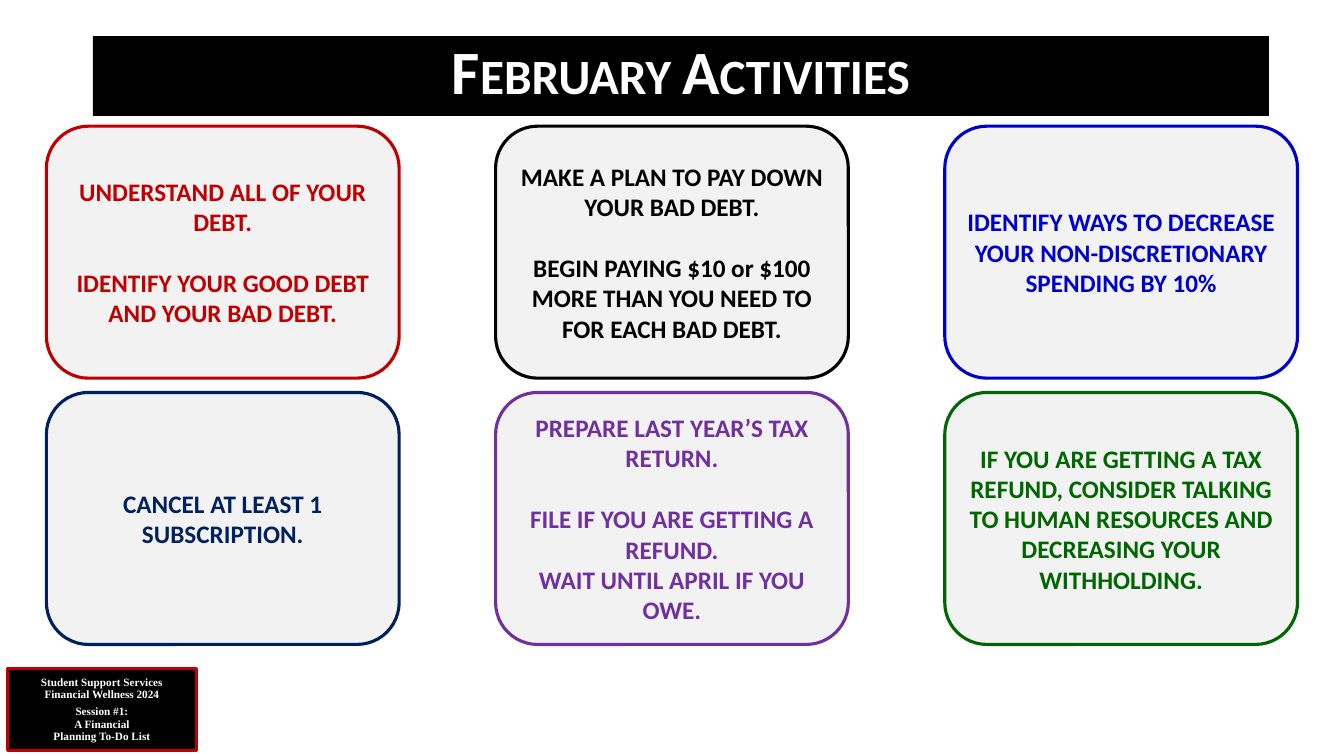
"""Build the February activities slide of a financial wellness session."""
from copy import deepcopy
from dataclasses import dataclass

from pptx import Presentation
from pptx.dml.color import RGBColor
from pptx.enum.shapes import MSO_SHAPE
from pptx.enum.text import MSO_ANCHOR, PP_ALIGN
from pptx.oxml.ns import qn
from pptx.shapes.autoshape import Shape
from pptx.slide import Slide
from pptx.util import Cm, Pt


@dataclass(frozen=True)
class Theme:
    """Colours, fonts and type sizes of the slide."""
    black: str = "000000"
    white: str = "FFFFFF"
    card_fill: str = "F2F2F2"
    red: str = "C00000"
    blue: str = "0000CC"
    navy: str = "002060"
    purple: str = "7030A0"
    green: str = "006600"
    body_font: str = "Calibri"
    label_font: str = "Times New Roman"
    title_size: float = 44
    card_size: float = 18
    label_size: float = 8
    outline: float = 2.25


@dataclass(frozen=True)
class Line:
    """A paragraph and the space before it in points."""
    text: str
    gap: float = 0


@dataclass(frozen=True)
class Activity:
    """A card with its grid cell, colour and paragraphs."""
    row: int
    column: int
    color: str
    lines: tuple[Line, ...]


THEME = Theme()
CARD_GAP = 22
CARD_LEFT, CARD_TOP = 1.17, 3.18
CARD_WIDTH, CARD_HEIGHT = 8.89, 6.35
COLUMN_STEP, ROW_STEP = 11.32, 6.71

ACTIVITIES = (
    Activity(0, 0, THEME.red, (
        Line("UNDERSTAND ALL OF YOUR DEBT."),
        Line("IDENTIFY YOUR GOOD DEBT AND YOUR BAD DEBT.", CARD_GAP))),
    Activity(0, 1, THEME.black, (
        Line("MAKE A PLAN TO PAY DOWN YOUR BAD DEBT."),
        Line("BEGIN PAYING $10 or $100 MORE THAN YOU NEED TO FOR EACH BAD DEBT.", CARD_GAP))),
    Activity(0, 2, THEME.blue, (
        Line("IDENTIFY WAYS TO DECREASE YOUR NON-DISCRETIONARY SPENDING BY 10%"),)),
    Activity(1, 0, THEME.navy, (Line("CANCEL AT LEAST 1 SUBSCRIPTION."),)),
    Activity(1, 1, THEME.purple, (
        Line("PREPARE LAST YEAR’S TAX RETURN."),
        Line("FILE IF YOU ARE GETTING A REFUND.", CARD_GAP),
        Line("WAIT UNTIL APRIL IF YOU OWE."))),
    Activity(1, 2, THEME.green, (
        Line("IF YOU ARE GETTING A TAX REFUND, CONSIDER TALKING TO HUMAN RESOURCES "
             "AND DECREASING YOUR WITHHOLDING."),)),
)
SESSION_LINES = (
    Line("Student Support Services"),
    Line("Financial Wellness 2024"),
    Line("Session #1:\nA Financial\nPlanning To-Do List", 4),
)


def add_panel(slide: Slide, kind: MSO_SHAPE, left: float, top: float, width: float,
              height: float, fill: str, outline: str | None = None) -> Shape:
    """Draw a filled panel measured in centimetres."""
    panel = slide.shapes.add_shape(kind, Cm(left), Cm(top), Cm(width), Cm(height))
    panel.shadow.inherit = False
    panel.fill.solid()
    panel.fill.fore_color.rgb = RGBColor.from_string(fill)
    if outline:
        panel.line.color.rgb = RGBColor.from_string(outline)
        panel.line.width = Pt(THEME.outline)
    else:
        panel.line.fill.background()
    return panel


def write_text(panel: Shape, lines: tuple[Line, ...], *, size: float, color: str,
               font: str = THEME.body_font, spacing: float = 1.0,
               anchor: MSO_ANCHOR = MSO_ANCHOR.MIDDLE, small_caps: bool = False) -> None:
    """Write centred bold paragraphs into a panel."""
    frame = panel.text_frame
    frame.word_wrap = True
    frame.vertical_anchor = anchor
    for index, line in enumerate(lines):
        paragraph = frame.add_paragraph() if index else frame.paragraphs[0]
        paragraph.text = line.text
        paragraph.alignment = PP_ALIGN.CENTER
        paragraph.line_spacing = spacing
        if line.gap:
            paragraph.space_before = Pt(line.gap)
        for run in paragraph.runs:
            run.font.name = font
            run.font.size = Pt(size)
            run.font.bold = True
            run.font.color.rgb = RGBColor.from_string(color)
            if small_caps:
                run.font._element.set("cap", "small")
        for line_break in paragraph._p.findall(qn("a:br")):
            line_break.append(deepcopy(paragraph.runs[0].font._element))


def add_activity(slide: Slide, activity: Activity) -> None:
    """Draw one activity card in its grid cell."""
    card = add_panel(slide, MSO_SHAPE.ROUNDED_RECTANGLE,
                     CARD_LEFT + activity.column * COLUMN_STEP,
                     CARD_TOP + activity.row * ROW_STEP,
                     CARD_WIDTH, CARD_HEIGHT, THEME.card_fill, activity.color)
    write_text(card, activity.lines, size=THEME.card_size, color=activity.color)


def main() -> None:
    """Build and save the slide."""
    deck = Presentation()
    deck.slide_width, deck.slide_height = Cm(33.87), Cm(19.05)
    slide = deck.slides.add_slide(deck.slide_layouts[6])

    session = add_panel(slide, MSO_SHAPE.RECTANGLE, 0.18, 16.84, 4.78, 2.08,
                        THEME.black, THEME.red)
    write_text(session, SESSION_LINES, size=THEME.label_size, color=THEME.white,
               font=THEME.label_font, spacing=0.9)

    title = add_panel(slide, MSO_SHAPE.RECTANGLE, 2.34, 0.91, 29.64, 2.01, THEME.black)
    write_text(title, (Line("February Activities"),), size=THEME.title_size,
               color=THEME.white, spacing=0.9, anchor=MSO_ANCHOR.TOP, small_caps=True)

    for activity in ACTIVITIES:
        add_activity(slide, activity)
    deck.save("out.pptx")


if __name__ == "__main__":
    main()
